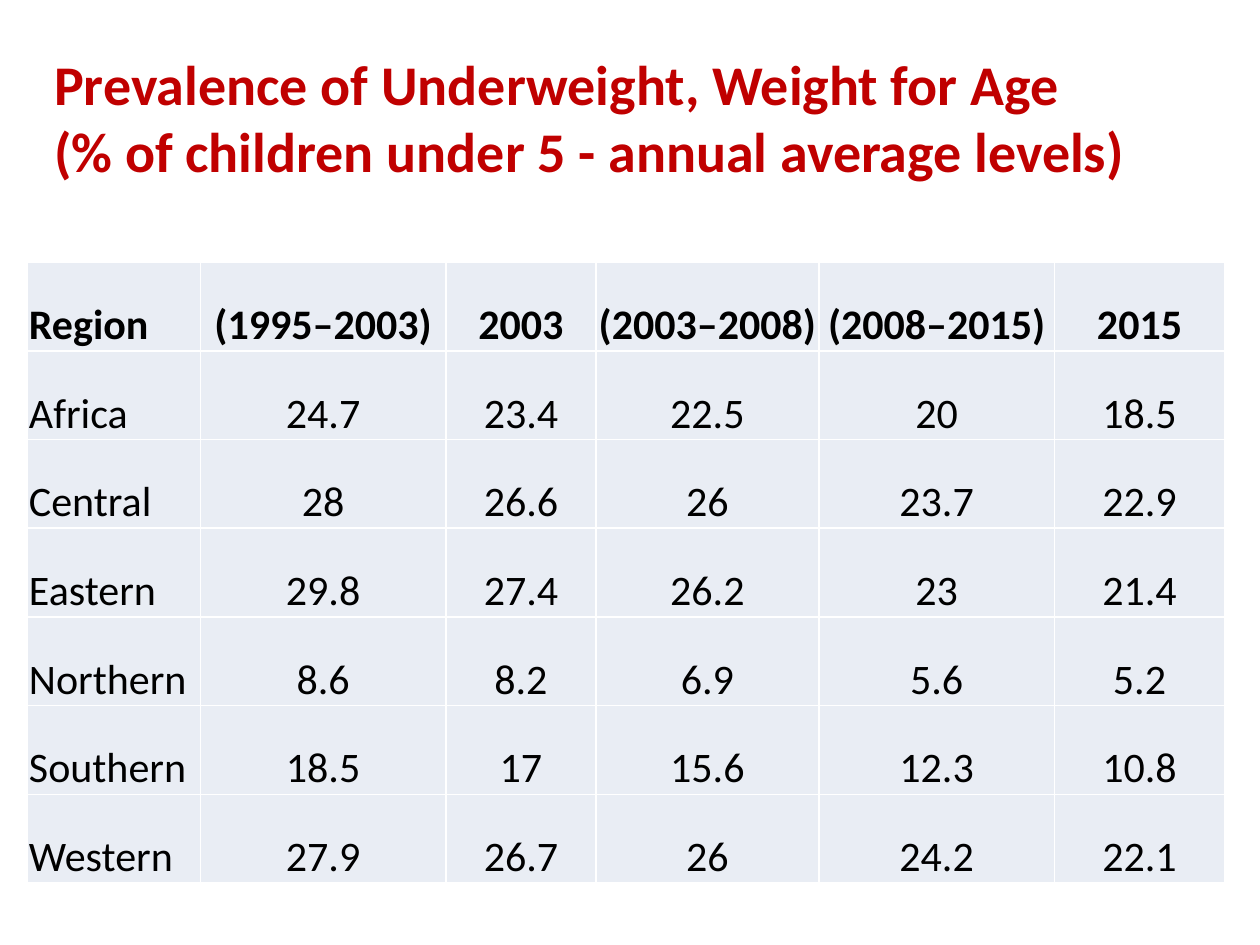
import dataclasses

import lxml.etree
import pptx
import pptx.dml.color
import pptx.enum.text
import pptx.oxml
import pptx.oxml.ns
import pptx.util

Inches = pptx.util.Inches
Align = pptx.enum.text.PP_ALIGN
Anchor = pptx.enum.text.MSO_ANCHOR


@dataclasses.dataclass(frozen=True)
class Theme:
    font: str = "Calibri"
    red: str = "C00000"
    ink: str = "000000"
    pale: str = "E9EDF4"
    rule: str = "FFFFFF"
    head: int = 32
    body: int = 24
    line: int = 1


THEME = Theme()
TITLE = ("Prevalence of Underweight, Weight for Age \v"
         "(% of children under 5 - annual average levels)")
WIDTHS = [1.37, 1.95, 1.19, 1.77, 1.87, 1.35]
ROWS = [
    ["Region", "(1995–2003)", "2003", "(2003–2008)", "(2008–2015)", "2015"],
    ["Africa", "24.7", "23.4", "22.5", "20", "18.5"],
    ["Central", "28", "26.6", "26", "23.7", "22.9"],
    ["Eastern", "29.8", "27.4", "26.2", "23", "21.4"],
    ["Northern", "8.6", "8.2", "6.9", "5.6", "5.2"],
    ["Southern", "18.5", "17", "15.6", "12.3", "10.8"],
    ["Western", "27.9", "26.7", "26", "24.2", "22.1"],
]


def style(frame, size, color, bold, align):
    for para in frame.paragraphs:
        para.alignment = align
        for run in para.runs:
            run.font.name = THEME.font
            run.font.size = pptx.util.Pt(size)
            run.font.bold = bold
            run.font.color.rgb = pptx.dml.color.RGBColor.from_string(color)


def border(cell):
    props = cell._tc.get_or_add_tcPr()
    for spot, side in enumerate(("lnL", "lnR", "lnT", "lnB")):
        line = pptx.oxml.parse_xml(
            f'<a:{side} {pptx.oxml.ns.nsdecls("a")} w="{pptx.util.Pt(THEME.line)}">'
            f'<a:solidFill><a:srgbClr val="{THEME.rule}"/></a:solidFill></a:{side}>')
        props.insert(spot, line)


def add_title(slide, left, top, width, height):
    title = slide.shapes.title
    title.left, title.top = Inches(left), Inches(top)
    title.width, title.height = Inches(width), Inches(height)
    frame = title.text_frame
    frame.text = TITLE
    frame.word_wrap = True
    frame.auto_size = pptx.enum.text.MSO_AUTO_SIZE.NONE
    frame.vertical_anchor = Anchor.MIDDLE
    style(frame, THEME.head, THEME.red, True, Align.LEFT)


def fill_cell(cell, text, bold, align):
    cell.text = text
    cell.vertical_anchor = Anchor.BOTTOM
    cell.margin_left = cell.margin_right = cell.margin_top = Inches(0.01)
    cell.margin_bottom = 0
    cell.fill.solid()
    cell.fill.fore_color.rgb = pptx.dml.color.RGBColor.from_string(THEME.pale)
    border(cell)
    style(cell.text_frame, THEME.body, THEME.ink, bold, align)


def add_grid(slide, left, top, width, height):
    table = slide.shapes.add_table(
        len(ROWS), len(WIDTHS), Inches(left), Inches(top),
        Inches(width), Inches(height)).table
    table.first_row = table.horz_banding = False
    # Column widths share out the box; rows are equal
    for col, part in zip(table.columns, WIDTHS):
        col.width = Inches(width * part / sum(WIDTHS))
    for r, row in enumerate(ROWS):
        table.rows[r].height = Inches(height / len(ROWS))
        for c, text in enumerate(row):
            align = Align.CENTER if c else Align.LEFT
            fill_cell(table.cell(r, c), text, r == 0, align)


def main():
    deck = pptx.Presentation()
    deck.slide_width, deck.slide_height = Inches(10), Inches(7.5)
    slide = deck.slides.add_slide(deck.slide_layouts[5])
    # Heading, then the regional figures
    add_title(slide, 0.33, 0.3, 9.58, 1.25)
    add_grid(slide, 0.22, 2.08, 9.5, 4.93)
    deck.save("out.pptx")


if __name__ == "__main__":
    main()
